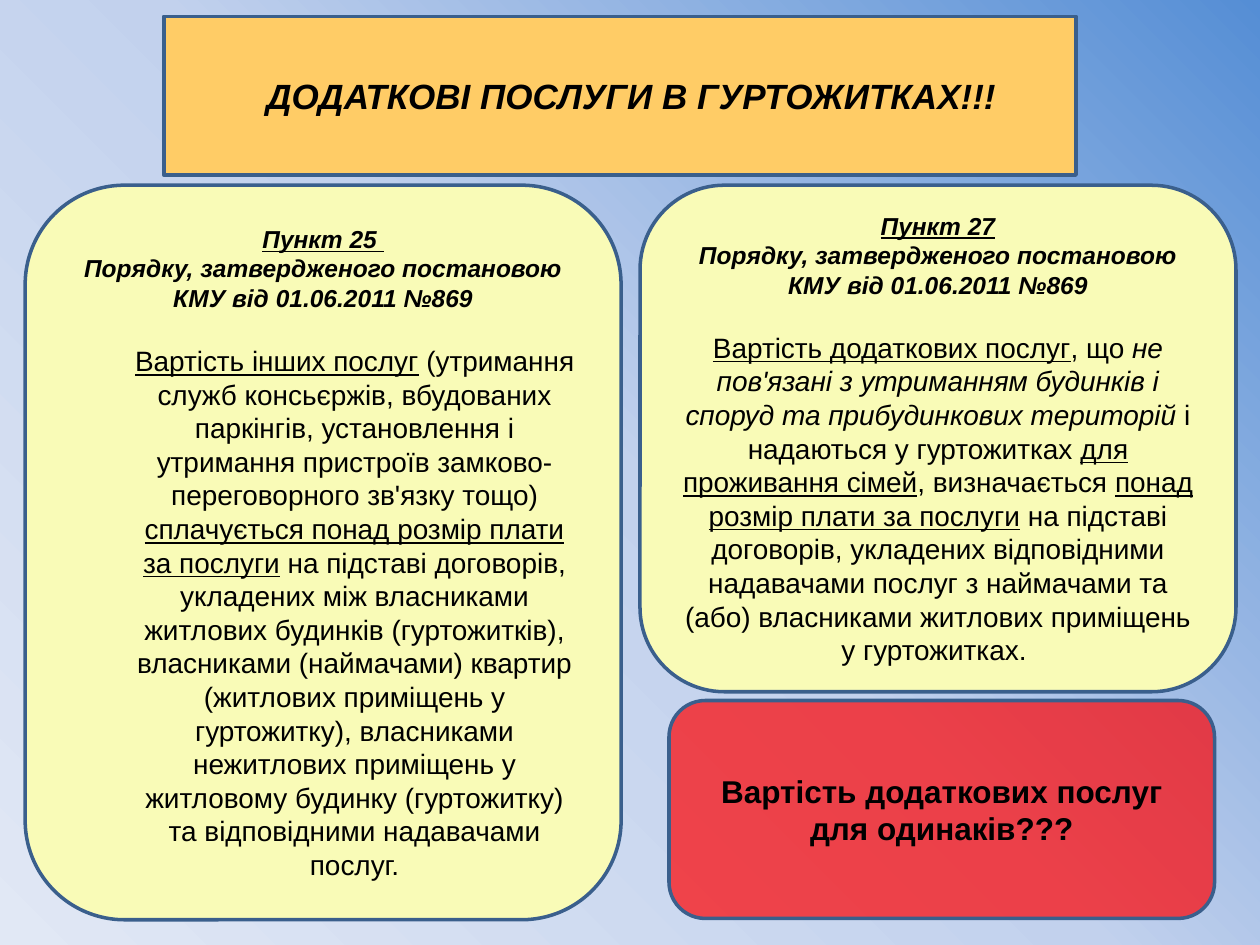
from copy import deepcopy

from lxml.etree import SubElement
from pptx import Presentation
from pptx.dml.color import RGBColor
from pptx.enum.shapes import MSO_SHAPE
from pptx.enum.text import MSO_ANCHOR, MSO_AUTO_SIZE, PP_ALIGN
from pptx.oxml.ns import qn
from pptx.util import Inches, Pt

ORDER = "Порядку, затвердженого постановою КМУ від 01.06.2011 №869"
OTHER_SERVICES = [
    ("Вартість інших послуг", "u"),
    (" (утримання служб консьєржів, вбудованих паркінгів, установлення і утримання "
     "пристроїв замково-переговорного зв'язку тощо) ", ""),
    ("сплачується понад розмір плати за послуги", "u"),
    (" на підставі договорів, укладених між власниками житлових будинків (гуртожитків), "
     "власниками (наймачами) квартир (житлових приміщень у гуртожитку), власниками "
     "нежитлових приміщень у житловому будинку (гуртожитку) та відповідними "
     "надавачами послуг.", ""),
]
EXTRA_SERVICES = [
    ("Вартість додаткових послуг", "u"),
    (", що ", ""),
    ("не пов'язані з утриманням будинків і споруд та прибудинкових територій", "i"),
    (" і надаються у гуртожитках ", ""),
    ("для проживання сімей", "u"),
    (", визначається ", ""),
    ("понад розмір плати за послуги", "u"),
    (" на підставі договорів, укладених відповідними надавачами послуг з наймачами та "
     "(або) власниками житлових приміщень у гуртожитках. ", ""),
]


def color(value):
    """Turn a hex string into a colour."""
    return RGBColor.from_string(value)


def add_runs(paragraph, runs, size):
    """Add centred runs, each styled by the letters b, i and u."""
    paragraph.alignment = PP_ALIGN.CENTER
    for text, style in runs:
        run = paragraph.add_run()
        run.text = text
        font = run.font
        font.name = "Arial"
        font.size = Pt(size)
        font.color.rgb = color("000000")
        font.bold = "b" in style
        font.italic = "i" in style
        font.underline = "u" in style


def add_box(slide, kind, box, fill):
    """Add an outlined box for centred text."""
    shape = slide.shapes.add_shape(kind, *map(Inches, box))
    shape.shadow.inherit = False
    shape.fill.solid()
    shape.fill.fore_color.rgb = color(fill)
    shape.line.color.rgb = color("3A5F8C")
    shape.line.width = Pt(2)
    shape.text_frame.word_wrap = True
    shape.text_frame.vertical_anchor = MSO_ANCHOR.MIDDLE
    return shape


def add_background(slide):
    """Fill the background with a diagonal three-colour gradient."""
    fill = slide.background.fill
    fill.gradient()
    fill.gradient_angle = 225
    stop_list = slide.element.find(".//" + qn("a:gsLst"))
    stop_list.insert(1, deepcopy(stop_list[0]))
    stops = zip(fill.gradient_stops, (0, 0.5, 1), ("558ED5", "C2D1ED", "E1E8F5"))
    for stop, position, value in stops:
        stop.position = position
        stop.color.rgb = color(value)


def add_heading(slide, box, text):
    """Add the banner and place the title over it."""
    add_box(slide, MSO_SHAPE.RECTANGLE, box, "FFCC66")
    title = slide.shapes.title
    title.left, title.top, title.width, title.height = map(Inches, (0.51, box[1], 9, 1.25))
    slide.shapes.element.append(title.element)
    frame = title.text_frame
    frame.auto_size = MSO_AUTO_SIZE.NONE
    frame.vertical_anchor = MSO_ANCHOR.MIDDLE
    add_runs(frame.paragraphs[0], [(text, "bi")], 20)


def add_clause(slide, box, clause, body, level):
    """Add a panel with a clause number, its source and its wording."""
    frame = add_box(slide, MSO_SHAPE.ROUNDED_RECTANGLE, box, "F9FBB7").text_frame
    add_runs(frame.paragraphs[0], [(clause, "biu")], 14)
    add_runs(frame.add_paragraph(), [(ORDER, "bi")], 14)
    paragraph = frame.add_paragraph()
    paragraph.level = level
    paragraph.space_before = Pt(18)
    add_runs(paragraph, body, 16)


def add_question(slide, box, text):
    """Add the translucent red question panel."""
    shape = add_box(slide, MSO_SHAPE.ROUNDED_RECTANGLE, box, "FF0000")
    fill_color = shape.element.spPr.find(qn("a:solidFill"))[0]
    SubElement(fill_color, qn("a:alpha"), val="69000")
    add_runs(shape.text_frame.paragraphs[0], [(text, "b")], 18)


def main():
    """Build and save the slide."""
    presentation = Presentation()
    presentation.slide_width = Inches(10)
    presentation.slide_height = Inches(7.5)
    slide = presentation.slides.add_slide(presentation.slide_layouts[5])
    add_background(slide)
    add_heading(slide, (1.3, 0.13, 7.24, 1.26), "ДОДАТКОВІ ПОСЛУГИ В ГУРТОЖИТКАХ!!!")
    add_clause(slide, (0.2, 1.47, 4.73, 5.83), "Пункт 25 ", OTHER_SERVICES, 1)
    add_clause(slide, (5.08, 1.47, 4.73, 4.02), "Пункт 27", EXTRA_SERVICES, 0)
    add_question(slide, (5.31, 5.56, 4.33, 1.73), "Вартість додаткових послуг для одинаків???")
    presentation.save("out.pptx")


if __name__ == "__main__":
    main()
